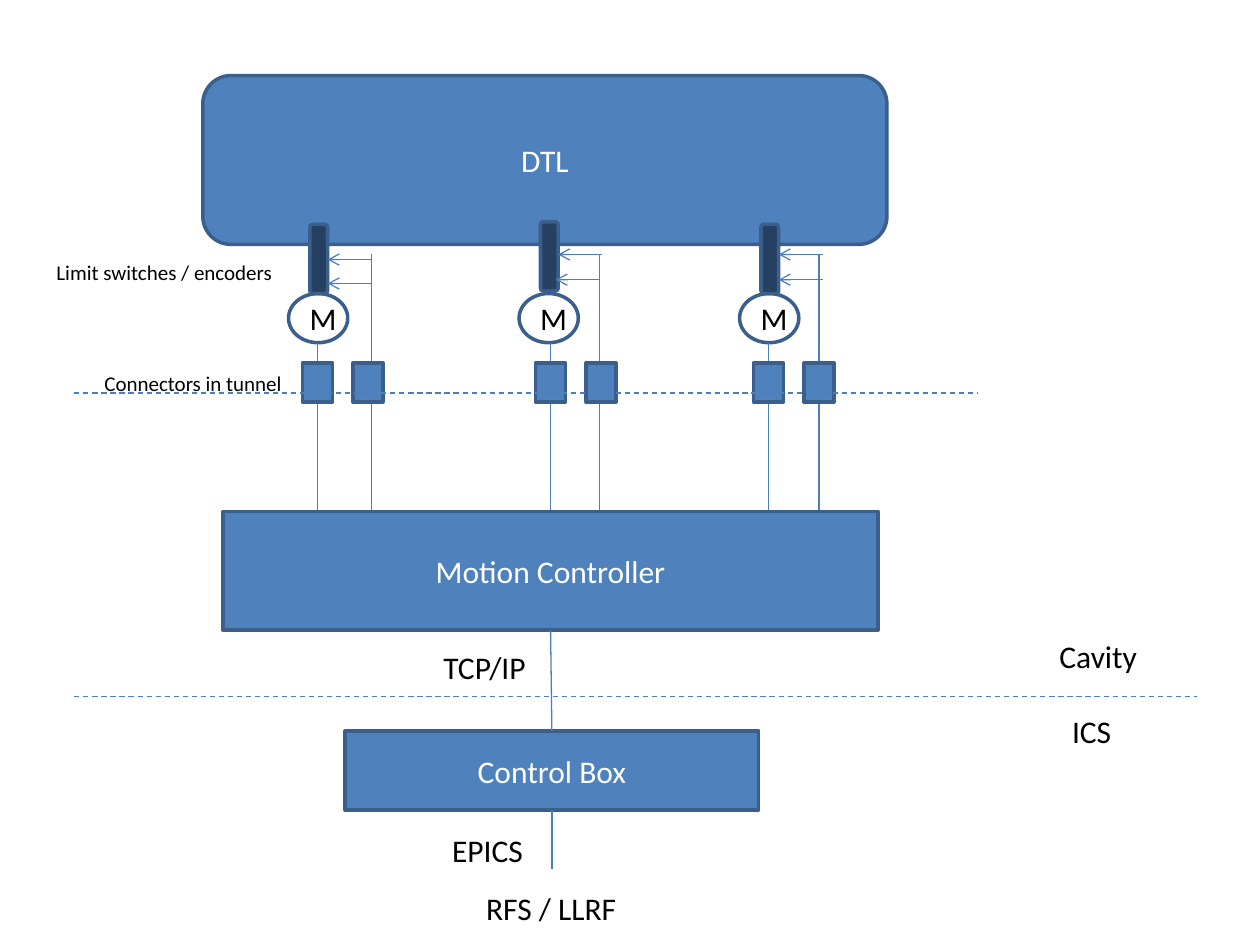
from dataclasses import dataclass

from lxml.etree import SubElement
from pptx import Presentation
from pptx.dml.color import RGBColor
from pptx.enum.dml import MSO_LINE
from pptx.enum.shapes import MSO_CONNECTOR, MSO_SHAPE
from pptx.enum.text import MSO_ANCHOR, MSO_AUTO_SIZE, PP_ALIGN
from pptx.oxml.ns import qn
from pptx.util import Inches, Pt

COLUMNS, ROWS = 100, 75  # grid of the slide, 0.1 inch a cell
TOP, BOTTOM = 0, 2  # connection sites of a rectangle


@dataclass(frozen=True)
class Theme:
    font: str = "Calibri"
    block: str = "4F81BD"
    shaft: str = "254061"
    outline: str = "3A5F8C"
    wire: str = "4B7EBC"
    light: str = "FFFFFF"
    dark: str = "000000"
    body_size: int = 18
    note_size: int = 12
    outline_width: float = 2
    wire_width: float = 0.75


@dataclass(frozen=True)
class Axis:
    """One motor with its shaft, limit switches and cables, in grid cells."""
    motor_left: float
    shaft_top: float
    power_x: float
    sensor_x: float
    switches: tuple  # (right end, row) of each arrow
    sensor_end: float


THEME = Theme()
AXES = (
    Axis(22.9, 17.8, 25.2, 29.5, ((29.5, 20.6), (29.5, 22.5)), 41.4),
    Axis(41.2, 17.6, 43.7, 47.6, ((47.8, 20.2), (47.6, 22.2)), 40.6),
    Axis(58.7, 17.8, 61.0, 65.0, ((65.3, 20.2), (65.3, 22.2)), 40.6),
)
MOTOR_TOP, MOTOR_WIDTH, MOTOR_HEIGHT = 23.3, 4.7, 3.9
SHAFT_OFFSET, SHAFT_WIDTH, SHAFT_HEIGHT = 1.7, 1.4, 5.5
PLUG_TOP, PLUG_WIDTH, PLUG_HEIGHT, PLUG_PITCH = 28.8, 2.4, 3.1, 4
POWER_END, SWITCH_LENGTH = 41.4, 3.5

LABELS = (
    ("Limit switches / encoders", 3.5, 20.1, 19.4, 3, THEME.note_size),
    ("Connectors in tunnel", 7.3, 28.9, 16.2, 3, THEME.note_size),
    ("Cavity", 83.1, 50.1, 8.2, 4, THEME.body_size),
    ("ICS", 84.1, 56, 5.2, 4, THEME.body_size),
    ("TCP/IP", 34.2, 50.9, 8.6, 4, THEME.body_size),
    ("EPICS", 34.9, 65.5, 7.7, 4, THEME.body_size),
    ("RFS / LLRF", 37.6, 70.1, 12.5, 4, THEME.body_size),
)


def cells(*counts):
    return [Inches(count / 10) for count in counts]


def write(frame, text, color, size):
    frame.text = text
    font = frame.paragraphs[0].runs[0].font
    font.name, font.size = THEME.font, Pt(size)
    font.color.rgb = RGBColor.from_string(color)


def add_block(slide, kind, left, top, width, height, text="",
              fill=THEME.block, color=THEME.light):
    block = slide.shapes.add_shape(kind, *cells(left, top, width, height))
    block.shadow.inherit = False
    block.fill.solid()
    block.fill.fore_color.rgb = RGBColor.from_string(fill)
    block.line.color.rgb = RGBColor.from_string(THEME.outline)
    block.line.width = Pt(THEME.outline_width)
    if text:
        write(block.text_frame, text, color, THEME.body_size)
        block.text_frame.vertical_anchor = MSO_ANCHOR.MIDDLE
        block.text_frame.paragraphs[0].alignment = PP_ALIGN.CENTER
    return block


def add_label(slide, text, left, top, width, height, size):
    label = slide.shapes.add_textbox(*cells(left, top, width, height))
    label.text_frame.word_wrap = False
    label.text_frame.auto_size = MSO_AUTO_SIZE.SHAPE_TO_FIT_TEXT
    write(label.text_frame, text, THEME.dark, size)


def add_wire(slide, x1, y1, x2, y2, dashed=False, arrow=False):
    wire = slide.shapes.add_connector(MSO_CONNECTOR.STRAIGHT, *cells(x1, y1, x2, y2))
    wire.line.color.rgb = RGBColor.from_string(THEME.wire)
    wire.line.width = Pt(THEME.wire_width)
    if dashed:
        wire.line.dash_style = MSO_LINE.DASH
    properties = wire._element.spPr
    if arrow:
        SubElement(properties.find(qn("a:ln")), qn("a:tailEnd"), type="arrow")
    SubElement(properties, qn("a:effectLst"))
    return wire


def add_drive(slide, axis):
    """Motor, shaft, limit switches and the two cables of an axis."""
    shaft_left = axis.motor_left + SHAFT_OFFSET
    add_block(slide, MSO_SHAPE.OVAL, axis.motor_left, MOTOR_TOP,
              MOTOR_WIDTH, MOTOR_HEIGHT, "M", THEME.light, THEME.dark)
    add_block(slide, MSO_SHAPE.ROUNDED_RECTANGLE, shaft_left, axis.shaft_top,
              SHAFT_WIDTH, SHAFT_HEIGHT, fill=THEME.shaft)
    for right, row in axis.switches:
        add_wire(slide, right, row, right - SWITCH_LENGTH, row, arrow=True)
    add_wire(slide, axis.power_x, MOTOR_TOP + MOTOR_HEIGHT, axis.power_x, POWER_END)
    add_wire(slide, axis.sensor_x, 20.2, axis.sensor_x, axis.sensor_end)


def add_plugs(slide, axis):
    first_left = axis.power_x - PLUG_WIDTH / 2
    for left in (first_left, first_left + PLUG_PITCH):
        add_block(slide, MSO_SHAPE.RECTANGLE, left, PLUG_TOP, PLUG_WIDTH, PLUG_HEIGHT)


def main():
    deck = Presentation()
    deck.slide_width, deck.slide_height = cells(COLUMNS, ROWS)
    slide = deck.slides.add_slide(deck.slide_layouts[6])

    add_block(slide, MSO_SHAPE.ROUNDED_RECTANGLE, 16.1, 6, 54.3, 13.4, "DTL")
    for axis in AXES:
        add_drive(slide, axis)
    controller = add_block(slide, MSO_SHAPE.RECTANGLE, 17.7, 40.6, 52, 9.4,
                           "Motion Controller")
    for axis in AXES:
        add_plugs(slide, axis)
    control_box = add_block(slide, MSO_SHAPE.RECTANGLE, 27.4, 58, 32.8, 6.3,
                            "Control Box")

    add_wire(slide, 5.9, 31.2, 77.6, 31.2, dashed=True)
    add_wire(slide, 5.9, 55.3, 95, 55.3, dashed=True)
    network = add_wire(slide, 43.7, 50, 43.7, 58)
    network.begin_connect(controller, BOTTOM)
    network.end_connect(control_box, TOP)
    epics = add_wire(slide, 43.8, 64.3, 43.8, 69)
    epics.begin_connect(control_box, BOTTOM)

    for label in LABELS:
        add_label(slide, *label)
    deck.save("out.pptx")


if __name__ == "__main__":
    main()
